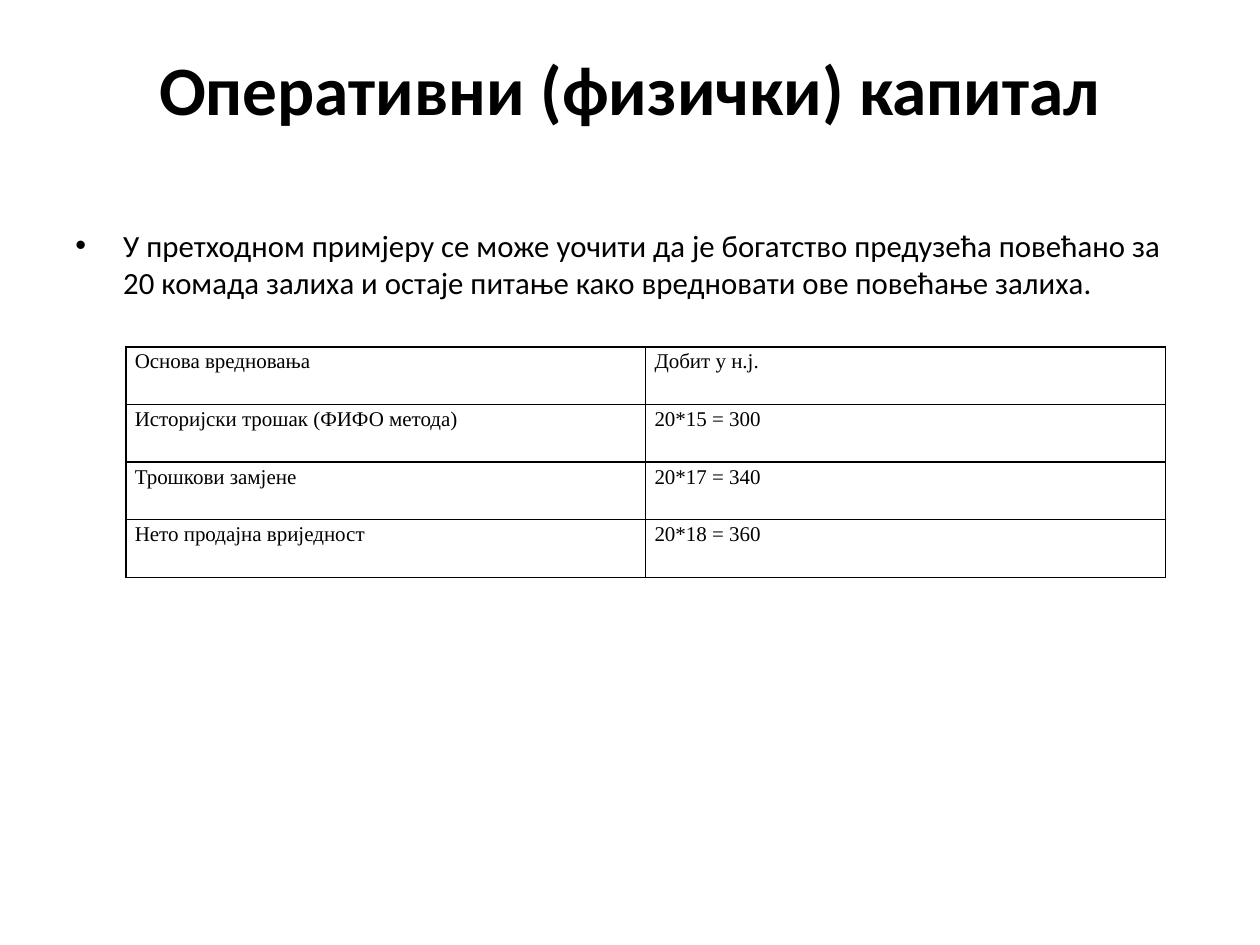
"""Build the slide on operating (physical) capital with its valuation table."""
from typing import NamedTuple

from lxml import etree
from pptx import Presentation
from pptx.dml.color import RGBColor
from pptx.enum.text import MSO_ANCHOR, PP_ALIGN
from pptx.oxml.ns import qn
from pptx.util import Inches, Pt

BLACK = RGBColor(0, 0, 0)
WHITE = RGBColor(255, 255, 255)
MIDDLE = MSO_ANCHOR.MIDDLE
CENTER = PP_ALIGN.CENTER
JUSTIFY = PP_ALIGN.JUSTIFY
WIDTH = Inches(10)
HEIGHT = Inches(7.5)
SANS = "Calibri"
SERIF = "Times New Roman"
TITLE = "Оперативни (физички) капитал\v"
BODY = (
    "У претходном примјеру се може уочити да је богатство предузећа повећано за "
    "20 комада залиха и остаје питање како вредновати ове повећање залиха."
)


class Area(NamedTuple):
    """Hold a box as shares of the slide's size."""
    left: float
    top: float
    width: float
    height: float

    def frame(self) -> tuple[int, int, int, int]:
        """Return left, top, width and height as lengths."""
        return (int(self.left * WIDTH), int(self.top * HEIGHT),
                int(self.width * WIDTH), int(self.height * HEIGHT))


class Basis(NamedTuple):
    """Hold one row of the valuation table."""
    name: str
    profit: str


HEAD = Area(0.05, 0.077, 0.9, 0.13)
NOTE = Area(0.05, 0.233, 0.9, 0.11)
GRID = Area(0.1, 0.367, 0.825, 0.244)
ROWS = [
    Basis("Основа вредновања", "Добит у н.ј."),
    Basis("Историјски трошак (ФИФО метода)", "20*15 = 300"),
    Basis("Трошкови замјене", "20*17 = 340"),
    Basis("Нето продајна вриједност", "20*18 = 360"),
]


def style(para, face: str, size: float, bold: bool = False) -> None:
    """Set the font of every run in a paragraph."""
    for run in para.runs:
        font = run.font
        font.name, font.size, font.bold = face, Pt(size), bold
        font.color.rgb = BLACK
    para.font.size = Pt(size)


def add_title(slide) -> None:
    """Place and format the title."""
    title = slide.shapes.title
    title.left, title.top, title.width, title.height = HEAD.frame()
    frame = title.text_frame
    frame.text = TITLE
    frame.vertical_anchor = MIDDLE
    para = frame.paragraphs[0]
    para.alignment = CENTER
    para.line_spacing = 0.9
    style(para, SANS, 39.6, True)
    for gap in para._p.findall(qn("a:br")):
        etree.SubElement(gap, qn("a:rPr"), sz="3960")


def add_note(slide) -> None:
    """Add the bulleted paragraph."""
    frame = slide.shapes.add_textbox(*NOTE.frame()).text_frame
    frame.word_wrap = True
    frame.text = BODY
    para = frame.paragraphs[0]
    props = para._p.get_or_add_pPr()
    props.set("marL", str(Inches(0.38)))
    props.set("indent", str(-Inches(0.38)))
    etree.SubElement(props, qn("a:buFont"), typeface="Arial")
    etree.SubElement(props, qn("a:buChar"), char="•")
    style(para, SANS, 17.6)


def add_edges(cell) -> None:
    """Draw a thin line on each side of a cell."""
    props = cell._tc.get_or_add_tcPr()
    for spot, side in enumerate(("lnL", "lnR", "lnT", "lnB")):
        line = etree.Element(qn(f"a:{side}"), w=str(Pt(1)))
        fill = etree.SubElement(line, qn("a:solidFill"))
        etree.SubElement(fill, qn("a:srgbClr"), val=str(BLACK))
        props.insert(spot, line)


def fill_cell(cell, text: str) -> None:
    """Write and format one table cell."""
    cell.fill.solid()
    cell.fill.fore_color.rgb = WHITE
    cell.margin_left = cell.margin_right = Inches(0.07)
    cell.margin_top = cell.margin_bottom = 0
    cell.text = text
    para = cell.text_frame.paragraphs[0]
    para.alignment = JUSTIFY
    para.line_spacing = 1.15
    para.space_after = Pt(6)
    style(para, SERIF, 12)
    add_edges(cell)


def add_grid(slide) -> None:
    """Add the valuation table."""
    shape = slide.shapes.add_table(len(ROWS), len(Basis._fields), *GRID.frame())
    table = shape.table
    table.first_row = table.horz_banding = False
    for row, basis in enumerate(ROWS):
        for col, text in enumerate(basis):
            fill_cell(table.cell(row, col), text)


def main() -> None:
    """Build and save the slide."""
    deck = Presentation()
    deck.slide_width, deck.slide_height = WIDTH, HEIGHT
    slide = deck.slides.add_slide(deck.slide_layouts[5])
    add_title(slide)
    add_note(slide)
    add_grid(slide)
    deck.save("out.pptx")


if __name__ == "__main__":
    main()
